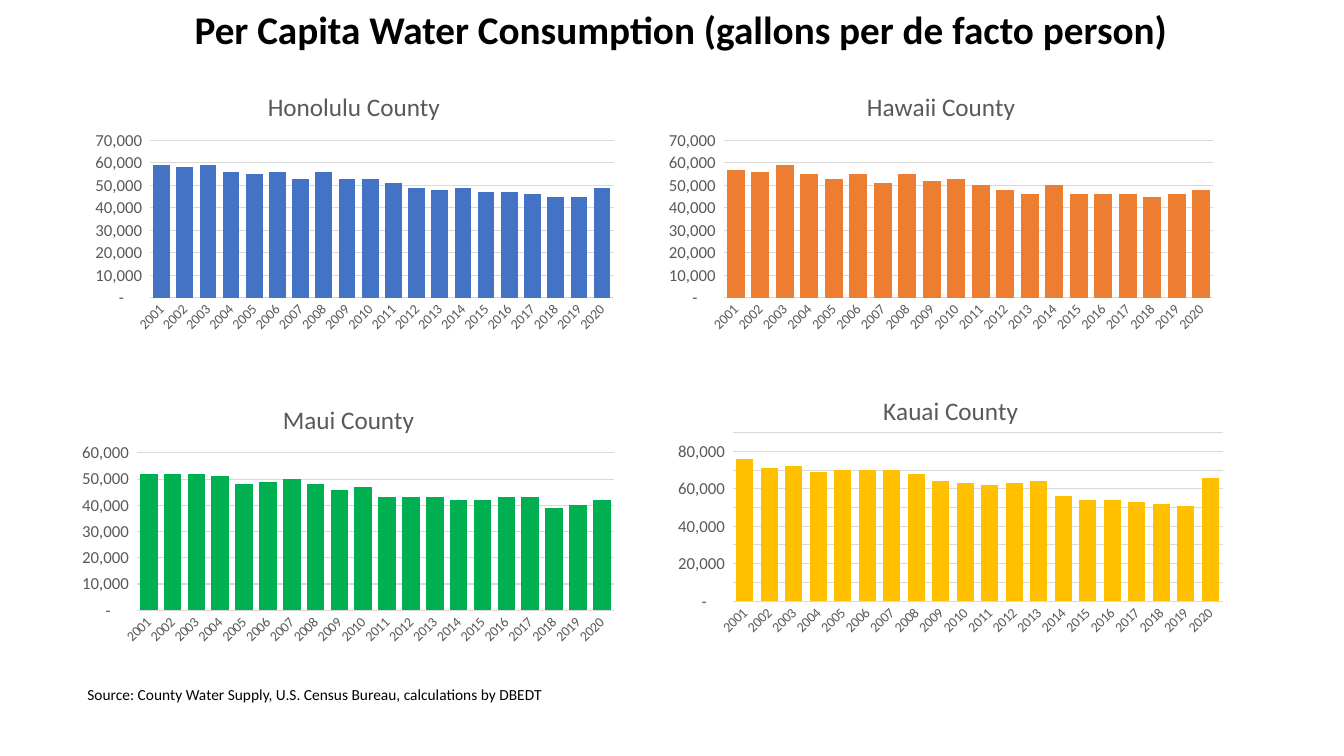
from dataclasses import dataclass

from lxml import etree
from pptx import Presentation
from pptx.chart.data import CategoryChartData
from pptx.dml.color import RGBColor
from pptx.enum.chart import XL_CHART_TYPE, XL_TICK_MARK
from pptx.enum.text import MSO_ANCHOR, PP_ALIGN
from pptx.oxml.ns import qn
from pptx.util import Pt

COLUMN = XL_CHART_TYPE.COLUMN_CLUSTERED
NO_TICK = XL_TICK_MARK.NONE
TOP = MSO_ANCHOR.TOP
LEFT = PP_ALIGN.LEFT


@dataclass(frozen=True)
class Theme:
    font: str = "Calibri"
    ink: str = "000000"
    label: str = "595959"
    grid: str = "D9D9D9"
    head: float = 28
    name: float = 18
    value: float = 12
    year: float = 10
    note: float = 11


THEME = Theme()
YEARS = [str(year) for year in range(2001, 2021)]
FORMAT = '_(* #,##0_);_(* \\(#,##0\\);_(* "-"??_);_('

# name, name width, colour, gap, axis top, plot top, box, thousands of gallons
COUNTIES = [
    ("Honolulu County", 128, "4472C4", 39, 70000, 53.5, (57.6, 46.8, 388.8, 195),
     [59, 58, 59, 56, 55, 56, 53, 56, 53, 53,
      51, 49, 48, 49, 47, 47, 46, 45, 45, 49]),
    ("Hawaii County", 110, "ED7D31", 36, 70000, 53.5, (467.3, 46.8, 407.5, 195),
     [57, 56, 59, 55, 53, 55, 51, 55, 52, 53,
      50, 48, 46, 50, 46, 46, 46, 45, 46, 48]),
    ("Maui County", 97, "00B050", 35, 60000, 53.5, (48.2, 270, 398.2, 195),
     [52, 52, 52, 51, 48, 49, 50, 48, 46, 47,
      43, 43, 43, 42, 42, 43, 43, 39, 40, 42]),
    ("Kauai County", 100, "FFC000", 44, 90000, 45.5, (473.8, 263.5, 407.5, 195),
     [76, 71, 72, 69, 70, 70, 70, 68, 64, 63,
      62, 63, 64, 56, 54, 54, 53, 52, 51, 66]),
]


def style(font, size, color, bold=False):
    font.name = THEME.font
    font.size = Pt(size)
    font.bold = bold
    font.color.rgb = RGBColor.from_string(color)


def place(node, index, **parts):
    """Give a chart part a manual layout, in fractions of the chart."""
    old = node.find(qn("c:layout"))
    if old is not None:
        node.remove(old)
    layout = etree.Element(qn("c:layout"))
    node.insert(index, layout)
    manual = etree.SubElement(layout, qn("c:manualLayout"))
    if "w" in parts:
        etree.SubElement(manual, qn("c:layoutTarget")).set("val", "inner")
    for key in ("x", "y"):
        etree.SubElement(manual, qn(f"c:{key}Mode")).set("val", "edge")
    for key, value in parts.items():
        etree.SubElement(manual, qn(f"c:{key}")).set("val", f"{value:.4f}")


def add_text(frame, text, size, bold=False):
    frame.text = text
    frame.word_wrap = True
    frame.vertical_anchor = TOP
    line = frame.paragraphs[0]
    line.alignment = LEFT
    style(line.runs[0].font, size, THEME.ink, bold)


def add_head(slide, box):
    title = slide.shapes.title
    title.left, title.top, title.width, title.height = map(Pt, box)
    add_text(title.text_frame,
             "Per Capita Water Consumption (gallons per de facto person)",
             THEME.head, True)


def add_note(slide, box):
    note = slide.shapes.add_textbox(*map(Pt, box))
    add_text(note.text_frame,
             "Source: County Water Supply, U.S. Census Bureau, calculations by DBEDT",
             THEME.note)


def set_axes(chart, top):
    years, values = chart.category_axis, chart.value_axis
    for axis, size in ((years, THEME.year), (values, THEME.value)):
        axis.major_tick_mark = axis.minor_tick_mark = NO_TICK
        style(axis.tick_labels.font, size, THEME.label)
    values.minimum_scale, values.maximum_scale = 0, top
    values.major_unit = 10000
    values.tick_labels.number_format = FORMAT
    values.tick_labels.number_format_is_linked = False
    values.format.line.fill.background()
    for line in (years.format.line, values.major_gridlines.format.line):
        line.color.rgb = RGBColor.from_string(THEME.grid)
        line.width = Pt(0.75)
    years._element.find(qn("c:txPr")).find(qn("a:bodyPr")).set("rot", "-2700000")


def add_county(slide, name, span, color, gap, top, inset, box, values):
    data = CategoryChartData()
    data.categories = YEARS
    data.add_series(name, [value * 1000 for value in values])
    chart = slide.shapes.add_chart(COLUMN, *map(Pt, box), data).chart
    style(chart.font, THEME.year, THEME.ink)
    chart.has_legend = False

    frame = chart.chart_title.text_frame
    frame.text = name
    style(frame.paragraphs[0].runs[0].font, THEME.name, THEME.label)
    chart.chart_title.include_in_layout = False
    wide, high = box[2:]
    place(chart.chart_title._element, 1,
          x=(wide - span) / 2 / wide, y=14 / high)
    place(chart._chartSpace.chart.plotArea, 0,
          x=49.5 / wide, y=inset / high,
          w=(wide - 57.5) / wide, h=(high - inset - 29) / high)

    set_axes(chart, top)
    plot = chart.plots[0]
    plot.gap_width, plot.overlap = gap, -27
    plot.vary_by_categories = False
    fill = plot.series[0].format.fill
    fill.solid()
    fill.fore_color.rgb = RGBColor.from_string(color)


def main():
    deck = Presentation()
    deck.slide_width, deck.slide_height = Pt(960), Pt(540)
    slide = deck.slides.add_slide(deck.slide_layouts[5])
    for county in COUNTIES:
        add_county(slide, *county)
    add_head(slide, (131.8, 0, 808.6, 41))
    add_note(slide, (55.4, 486, 444.2, 20.9))
    deck.save("out.pptx")


if __name__ == "__main__":
    main()
